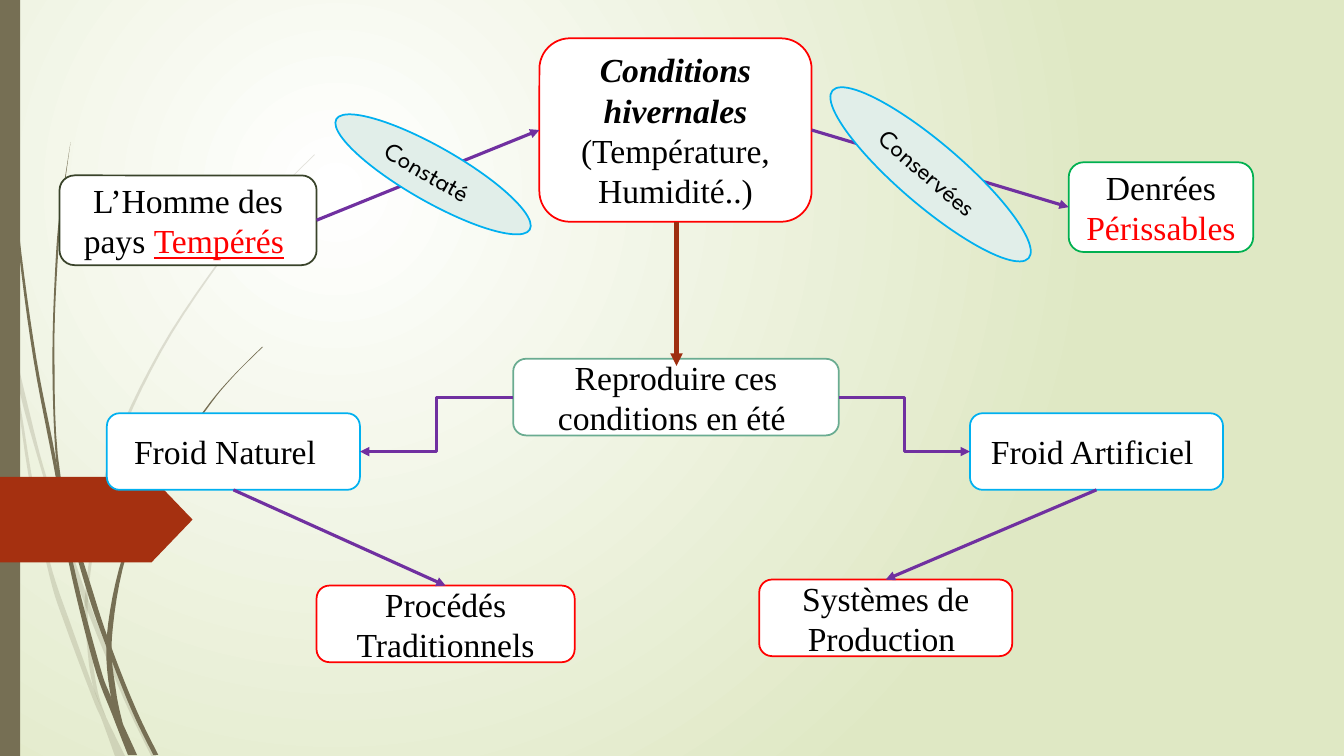
"""Builds a concept map linking winter conditions, natural cold and artificial cold."""
from lxml.etree import SubElement
from pptx import Presentation
from pptx.dml.color import RGBColor
from pptx.enum.shapes import MSO_CONNECTOR, MSO_SHAPE
from pptx.enum.text import MSO_ANCHOR, PP_ALIGN
from pptx.oxml.ns import qn
from pptx.util import Inches, Pt

BLACK = RGBColor(0x00, 0x00, 0x00)
WHITE = RGBColor(0xFF, 0xFF, 0xFF)
RED = RGBColor(0xFF, 0x00, 0x00)
GREEN = RGBColor(0x00, 0xB0, 0x50)
BLUE = RGBColor(0x00, 0xB0, 0xF0)
SAGE = RGBColor(0x6A, 0xAC, 0x91)
OLIVE = RGBColor(0x39, 0x43, 0x2A)
PURPLE = RGBColor(0x70, 0x30, 0xA0)
RUST = RGBColor(0x9E, 0x2E, 0x0F)
BRICK = RGBColor(0xA5, 0x30, 0x10)
TAUPE = RGBColor(0x76, 0x6F, 0x54)
MINT = RGBColor(0xE1, 0xEE, 0xE9)
LIME = RGBColor(0xDF, 0xE8, 0xC4)

SERIF, ROUND = "Times New Roman", "League Spartan"
TOP, LEFT, BOTTOM, RIGHT = range(4)

# name: (left, top, width, height), outline, extra right inset, runs (text, styles)
BOXES = {
    "homme": ((0.59, 1.74, 2.55, 0.89), OLIVE, 0,
              [("L’Homme des pays ", {}), ("Tempérés", {"color": RED, "underline": True}), (" ", {})]),
    "denrees": ((10.6, 1.61, 1.83, 0.89), GREEN, 0,
                [("Denrées ", {}), ("Périssables", {"color": RED})]),
    "hiver": ((5.35, 0.38, 2.7, 1.82), RED, 0,
              [("Conditions hivernales ", {"bold": True, "italic": True}),
               ("(Température, Humidité..)", {})]),
    "artificiel": ((9.62, 4.1, 2.51, 0.76), BLUE, 0, [("Froid Artificiel ", {})]),
    "naturel": ((1.06, 4.1, 2.51, 0.76), BLUE, 0.08, [("Froid Naturel ", {})]),
    "ete": ((5.09, 3.56, 3.23, 0.76), SAGE, 0, [("Reproduire ces conditions en été ", {})]),
    "systemes": ((7.53, 5.75, 2.51, 0.76), RED, 0, [("Systèmes de Production ", {})]),
    "procedes": ((3.14, 5.81, 2.56, 0.76), RED, 0, [("Procédés Traditionnels", {})]),
}
LINKS = [
    ("homme", RIGHT, "hiver", LEFT, MSO_CONNECTOR.STRAIGHT),
    ("hiver", RIGHT, "denrees", LEFT, MSO_CONNECTOR.STRAIGHT),
    ("ete", LEFT, "naturel", RIGHT, MSO_CONNECTOR.ELBOW),
    ("ete", RIGHT, "artificiel", LEFT, MSO_CONNECTOR.ELBOW),
    ("artificiel", BOTTOM, "systemes", TOP, MSO_CONNECTOR.STRAIGHT),
    ("naturel", BOTTOM, "procedes", TOP, MSO_CONNECTOR.STRAIGHT),
]
BUBBLES = [
    ((3.19, 1.46, 2.21, 0.54), 29.7, 0.06, "Constaté "),
    ((7.95, 1.42, 2.56, 0.62), 40.5, 0, "Conservées "),
]
FAINT_BLADES = [
    ([(0, 2.82), (0.06, 3.09), (0.11, 3.5), (0.21, 4.07), (0.31, 4.69), (0.41, 5.2), (0.53, 5.7),
      (0.7, 6.19), (0.93, 6.83), (1.05, 7.11), (1.24, 7.5)],
     [(0, 2.99), (0.11, 3.5), (0.28, 4.7), (0.49, 5.71), (0.65, 6.21), (0.92, 6.93), (1.01, 7.14),
      (1.14, 7.5)]),
    ([(0.14, 3.45), (0.28, 4.04), (0.43, 4.63), (0.62, 5.2), (0.92, 6.07), (1.27, 6.92), (1.55, 7.5)],
     [(0.14, 3.45), (0.17, 3.76), (0.29, 4.25), (0.58, 5.22), (0.84, 5.99), (1.23, 6.94), (1.5, 7.5)]),
    ([(3.12, 1.53), (2.68, 1.97), (2.28, 2.44), (1.58, 3.48), (1.07, 4.61), (0.85, 5.84),
      (0.87, 6.46), (0.93, 6.83), (1.05, 7.11)],
     [(3.12, 1.54), (2.68, 1.98), (2.29, 2.45), (1.6, 3.49), (1.1, 4.62), (0.88, 5.84),
      (0.91, 6.46), (0.97, 6.86), (1.05, 7.11)]),
]
DARK_BLADES = [
    ([(0.03, 0), (0.04, 0.48), (0.07, 1.1), (0.17, 2.33), (0.33, 3.55), (0.56, 4.77), (0.68, 5.57),
      (0.93, 6.59), (1.11, 7.08), (1.27, 7.49)],
     [(0.04, 0), (0.05, 0.48), (0.08, 1.09), (0.19, 2.32), (0.36, 3.55), (0.55, 4.53), (0.72, 5.56),
      (0.98, 6.57), (1.1, 6.91), (1.36, 7.49)]),
    ([(0.7, 1.41), (0.62, 1.93), (0.56, 2.45), (0.52, 3.49), (0.55, 4.49), (0.64, 5.05), (0.88, 5.92),
      (1.11, 6.56), (1.32, 7.08), (1.52, 7.49)],
     [(0.7, 1.41), (0.63, 1.93), (0.58, 2.45), (0.54, 3.49), (0.6, 4.72), (0.93, 5.9), (1.13, 6.49),
      (1.36, 7.06), (1.57, 7.49)]),
    ([(2.6, 3.44), (2.31, 3.73), (2.04, 4.05), (1.56, 4.74), (1.22, 5.51), (1.06, 6.31), (1.1, 6.91),
      (1.22, 7.19)],
     [(2.61, 3.44), (2.31, 3.74), (2.05, 4.06), (1.58, 4.76), (1.25, 5.52), (1.11, 6.33), (1.15, 6.85),
      (1.22, 7.19)]),
]


def smooth(points, steps=6):
    """Return points along a Catmull-Rom curve."""
    padded = [points[0], *points, points[-1]]
    curve = []
    for a, b, c, d in zip(padded, padded[1:], padded[2:], padded[3:]):
        for t in (i / steps for i in range(steps)):
            curve.append(tuple(
                0.5 * (2 * q + (r - p) * t + (2 * p - 5 * q + 4 * r - u) * t ** 2
                       + (3 * q - p - 3 * r + u) * t ** 3)
                for p, q, r, u in zip(a, b, c, d)))
    return curve + [points[-1]]


def paint(sp, fill, outline=None):
    """Set fill and outline and drop the shadow."""
    sp.shadow.inherit = False
    sp.fill.solid()
    sp.fill.fore_color.rgb = fill
    if outline is None:
        sp.line.fill.background()
    else:
        sp.line.color.rgb = outline
        sp.line.width = Pt(1.25)


def add_blade(s, edges, alpha=None):
    """Draw one blade of grass between two smoothed edges."""
    near, far = map(smooth, edges)
    outline = [(Inches(x), Inches(y)) for x, y in near + far[::-1]]
    builder = s.shapes.build_freeform(*outline[0])
    builder.add_line_segments(outline[1:], close=True)
    sp = builder.convert_to_shape()
    paint(sp, TAUPE)
    if alpha:
        color = sp.fill._xPr.find(qn("a:solidFill"))[0]
        SubElement(color, qn("a:alpha")).set("val", str(alpha * 1000))


def add_label(s, kind, frame, fill, outline, pad, runs, font, size):
    """Draw a shape with centred text."""
    sp = s.shapes.add_shape(kind, *map(Inches, frame))
    paint(sp, fill, outline)
    tf = sp.text_frame
    tf.word_wrap = True
    tf.vertical_anchor = MSO_ANCHOR.MIDDLE
    tf.margin_right = Inches(0.1 + pad)
    p = tf.paragraphs[0]
    p.alignment = PP_ALIGN.CENTER
    for text, style in runs:
        r = p.add_run()
        r.text = text
        r.font.name, r.font.size = font, Pt(size)
        r.font.color.rgb = style.get("color", BLACK)
        for key in ("bold", "italic", "underline"):
            if key in style:
                setattr(r.font, key, style[key])
    return sp


def add_arrow(s, kind, ends, color, width):
    """Draw a connector with a triangular head."""
    link = s.shapes.add_connector(kind, *map(Inches, ends))
    link.line.color.rgb = color
    link.line.width = Pt(width)
    SubElement(link.line._get_or_add_ln(), qn("a:tailEnd")).set("type", "triangle")
    SubElement(link._element.spPr, qn("a:effectLst"))
    return link


def set_background(s):
    """Fill the slide with a radial gradient."""
    fill = s.background.fill
    fill.gradient()
    for stop, color in zip(fill.gradient_stops, (WHITE, LIME)):
        stop.color.rgb = color
    grad = s._element.find(".//" + qn("a:gradFill"))
    grad.remove(grad.find(qn("a:lin")))
    radial = SubElement(grad, qn("a:path"))
    radial.set("path", "circle")
    focus = SubElement(radial, qn("a:fillToRect"))
    for side, share in zip("ltrb", (50, 50, 100, 100)):
        focus.set(side, str(share * 1000))


def main():
    """Build and save the slide."""
    prs = Presentation()
    prs.slide_width, prs.slide_height = Inches(13.33), Inches(7.5)
    s = prs.slides.add_slide(prs.slide_layouts[6])
    set_background(s)
    for edges in FAINT_BLADES:
        add_blade(s, edges, 20)
    for edges in DARK_BLADES:
        add_blade(s, edges)
    paint(s.shapes.add_shape(MSO_SHAPE.RECTANGLE, 0, 0, Inches(0.2), prs.slide_height), TAUPE)
    tab = s.shapes.add_shape(MSO_SHAPE.PENTAGON, 0, *map(Inches, (4.73, 1.91, 0.85)))
    tab.adjustments[0] = 0.48
    paint(tab, BRICK)

    boxes = {name: add_label(s, MSO_SHAPE.ROUNDED_RECTANGLE, frame, WHITE, outline, pad, runs, SERIF, 24)
             for name, (frame, outline, pad, runs) in BOXES.items()}
    for start, start_side, end, end_side, kind in LINKS:
        link = add_arrow(s, kind, (0, 0, 1, 1), PURPLE, 2.25)
        link.begin_connect(boxes[start], start_side)
        link.end_connect(boxes[end], end_side)
    add_arrow(s, MSO_CONNECTOR.STRAIGHT, (6.71, 2.2, 6.71, 3.63), RUST, 3)
    for frame, angle, pad, text in BUBBLES:
        bubble = add_label(s, MSO_SHAPE.OVAL, frame, MINT, BLUE, pad, [(text, {})], ROUND, 18)
        bubble.rotation = angle
    prs.save("out.pptx")


if __name__ == "__main__":
    main()
